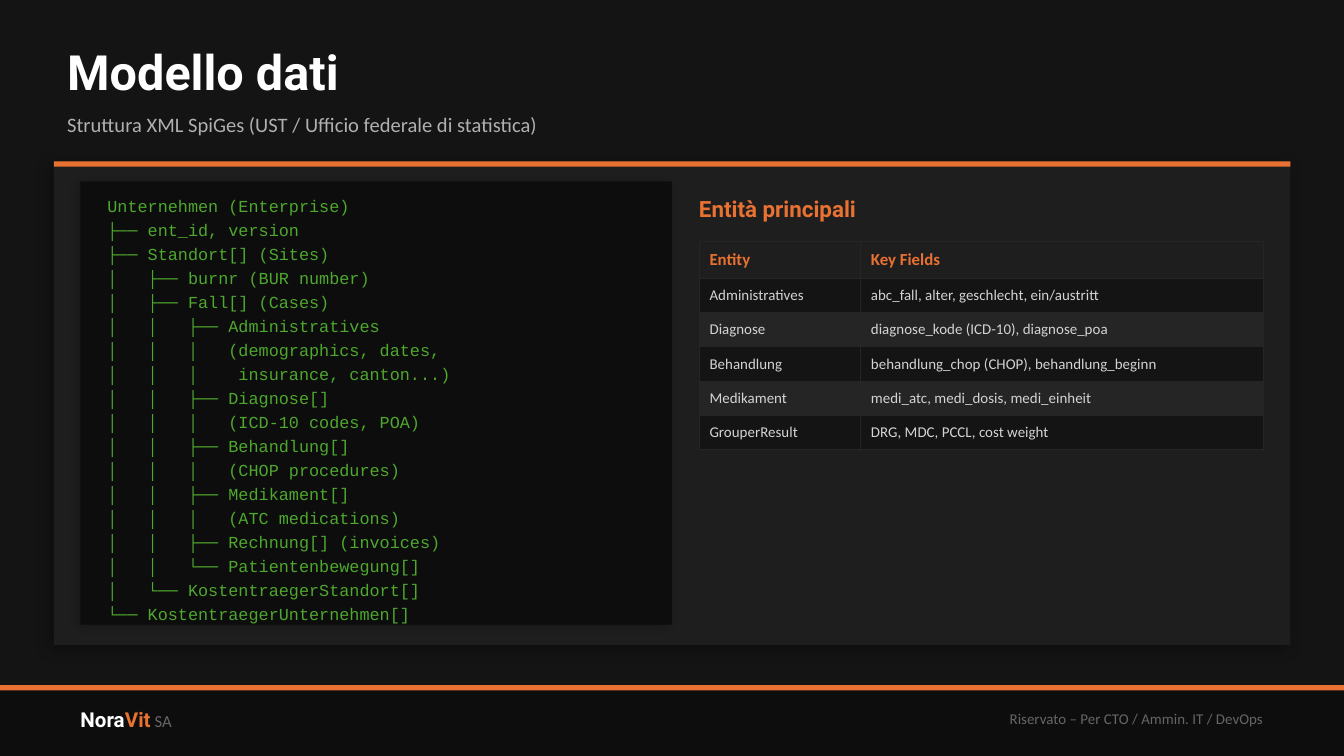
from lxml import etree
from pptx import Presentation
from pptx.dml.color import RGBColor
from pptx.enum.shapes import MSO_SHAPE
from pptx.enum.text import MSO_ANCHOR, MSO_AUTO_SIZE, PP_ALIGN
from pptx.oxml import parse_xml
from pptx.oxml.ns import nsdecls, qn
from pptx.util import Cm, Pt

RECTANGLE = MSO_SHAPE.RECTANGLE
TOP, MIDDLE = MSO_ANCHOR.TOP, MSO_ANCHOR.MIDDLE
LEFT, RIGHT = PP_ALIGN.LEFT, PP_ALIGN.RIGHT
NO_FIT = MSO_AUTO_SIZE.NONE

TREE = """Unternehmen (Enterprise)
├── ent_id, version
├── Standort[] (Sites)
│   ├── burnr (BUR number)
│   ├── Fall[] (Cases)
│   │   ├── Administratives
│   │   │   (demographics, dates,
│   │   │    insurance, canton...)
│   │   ├── Diagnose[]
│   │   │   (ICD-10 codes, POA)
│   │   ├── Behandlung[]
│   │   │   (CHOP procedures)
│   │   ├── Medikament[]
│   │   │   (ATC medications)
│   │   ├── Rechnung[] (invoices)
│   │   └── Patientenbewegung[]
│   └── KostentraegerStandort[]
└── KostentraegerUnternehmen[]"""

ENTITIES = [
    ("Entity", "Key Fields"),
    ("Administratives", "abc_fall, alter, geschlecht, ein/austritt"),
    ("Diagnose", "diagnose_kode (ICD-10), diagnose_poa"),
    ("Behandlung", "behandlung_chop (CHOP), behandlung_beginn"),
    ("Medikament", "medi_atc, medi_dosis, medi_einheit"),
    ("GrouperResult", "DRG, MDC, PCCL, cost weight"),
]


def rgb(value):
    """Turn a hex string into a colour."""
    return RGBColor.from_string(value)


class SlideBuilder:
    """Hold the style and the current slide, and add elements to it."""

    HEADING, BODY, CODE = "Roboto", "Calibri", "Courier New"
    PAGE, PANEL, DEEP, BAND = "141414", "1E1E1E", "0D0D0D", "252525"
    ACCENT, GREEN, WHITE = "E97132", "4EA72E", "FFFFFF"
    SUBTLE, MUTED, CELL = "B0B0B0", "666666", "D4D4D4"

    def __init__(self, slide):
        self.slide = slide
        slide.background.fill.solid()
        slide.background.fill.fore_color.rgb = rgb(self.PAGE)

    def run(self, paragraph, text, size, color, font=BODY, bold=False):
        """Add one formatted run."""
        run = paragraph.add_run()
        run.text = text
        run.font.name, run.font.size, run.font.bold = font, Pt(size), bold
        run.font.color.rgb = rgb(color)

    def rectangle(self, left, top, width, height, color, shadow=None):
        """Add a filled rectangle, with a shadow of (opacity, blur, distance) if given."""
        box = self.slide.shapes.add_shape(RECTANGLE, Cm(left), Cm(top), Cm(width), Cm(height))
        box.fill.solid()
        box.fill.fore_color.rgb = rgb(color)
        box.line.fill.background()
        box.shadow.inherit = False
        if shadow:
            opacity, blur, distance = shadow
            effects = box.element.spPr.find(qn("a:effectLst"))
            effects.append(parse_xml(
                f'<a:outerShdw {nsdecls("a")} blurRad="{Pt(blur)}" dist="{Pt(distance)}" '
                f'dir="{135 * 60000}" algn="bl" rotWithShape="0"><a:srgbClr val="000000">'
                f'<a:alpha val="{opacity * 1000}"/></a:srgbClr></a:outerShdw>'))

    def frame(self, shape, anchor, inset):
        """Set wrapping, anchor and insets, and return the text frame."""
        frame = shape.text_frame
        frame.word_wrap, frame.auto_size = True, NO_FIT
        frame.vertical_anchor = anchor
        if not inset:
            frame.margin_left = frame.margin_right = 0
            frame.margin_top = frame.margin_bottom = 0
        return frame

    def title(self, text, left, top, width, height):
        """Place and format the title placeholder."""
        title = self.slide.shapes.title
        title.left, title.top, title.width, title.height = map(Cm, (left, top, width, height))
        paragraph = self.frame(title, MIDDLE, False).paragraphs[0]
        paragraph.alignment = LEFT
        self.run(paragraph, text, 26, self.WHITE, self.HEADING, True)

    def text(self, left, top, width, height, paragraphs, anchor=MIDDLE,
             align=LEFT, inset=True, space_after=0):
        """Add a text box from paragraphs, each a list of run arguments."""
        box = self.slide.shapes.add_textbox(Cm(left), Cm(top), Cm(width), Cm(height))
        frame = self.frame(box, anchor, inset)
        for index, runs in enumerate(paragraphs):
            paragraph = frame.add_paragraph() if index else frame.paragraphs[0]
            paragraph.alignment = align
            paragraph.space_after = Pt(space_after)
            for run in runs:
                self.run(paragraph, *run)

    def borders(self, cell):
        """Draw a thin line on every side of a cell."""
        properties = cell._tc.get_or_add_tcPr()
        for side in ("a:lnL", "a:lnR", "a:lnT", "a:lnB"):
            line = etree.SubElement(properties, qn(side), w=str(Pt(0.5)))
            line.append(parse_xml(
                f'<a:solidFill {nsdecls("a")}><a:srgbClr val="{self.BAND}"/></a:solidFill>'))

    def table(self, left, top, column_widths, row_heights, rows):
        """Add a table with a header row and alternating fills."""
        table = self.slide.shapes.add_table(
            len(rows), len(column_widths), Cm(left), Cm(top),
            Cm(sum(column_widths)), Cm(sum(row_heights))).table
        table.horz_banding = False
        for column, width in zip(table.columns, column_widths):
            column.width = Cm(width)
        for index, (row, height, values) in enumerate(zip(table.rows, row_heights, rows)):
            row.height = Cm(height)
            fill = (self.BAND, self.PAGE)[index % 2] if index else self.PANEL
            style = (8, self.CELL) if index else (9, self.ACCENT, self.BODY, True)
            for cell, value in zip(row.cells, values):
                self.borders(cell)
                cell.fill.solid()
                cell.fill.fore_color.rgb = rgb(fill)
                cell.vertical_anchor = MIDDLE
                cell.margin_left = cell.margin_right = Cm(0.2)
                cell.margin_top = cell.margin_bottom = Cm(0.15)
                self.run(cell.text_frame.paragraphs[0], value, *style)


def main():
    """Build the data model slide."""
    deck = Presentation()
    deck.slide_width, deck.slide_height = Cm(25.4), Cm(14.29)
    page = SlideBuilder(deck.slides.add_slide(deck.slide_layouts[5]))

    page.rectangle(0, 12.95, 25.4, 1.34, page.DEEP)
    page.rectangle(0, 12.95, 25.4, 0.1, page.ACCENT)
    page.text(1.27, 13.08, 7.62, 1.02, [[
        ("Nora", 11, page.WHITE, page.HEADING, True),
        ("Vit", 11, page.ACCENT, page.HEADING, True),
        (" SA", 9, page.MUTED)]])
    page.text(13.97, 13.08, 10.16, 1.02,
              [[("Riservato – Per CTO / Ammin. IT / DevOps", 8, page.MUTED)]], align=RIGHT)

    page.title("Modello dati", 1.27, 0.64, 22.86, 1.4)
    page.text(1.27, 1.91, 22.86, 0.89, [[
        ("Struttura XML SpiGes (UST / Ufficio federale di statistica)", 11, page.SUBTLE)]],
        inset=False)

    page.rectangle(1.02, 3.05, 23.37, 9.14, page.PANEL, (35, 8, 3))
    page.rectangle(1.02, 3.05, 23.37, 0.1, page.ACCENT)
    page.rectangle(1.52, 3.43, 11.18, 8.38, page.DEEP, (20, 4, 2))
    page.text(1.78, 3.58, 10.67, 8.08,
              [[(line, 9, page.GREEN, page.CODE)] for line in TREE.splitlines()],
              anchor=TOP, space_after=2)

    page.text(13.21, 3.56, 10.67, 0.76,
              [[("Entità principali", 12, page.ACCENT, page.HEADING, True)]], inset=False)
    page.table(13.21, 4.57, (3.05, 7.62), (0.68,) + (0.63,) * 5, ENTITIES)
    deck.save("out.pptx")


if __name__ == "__main__":
    main()
